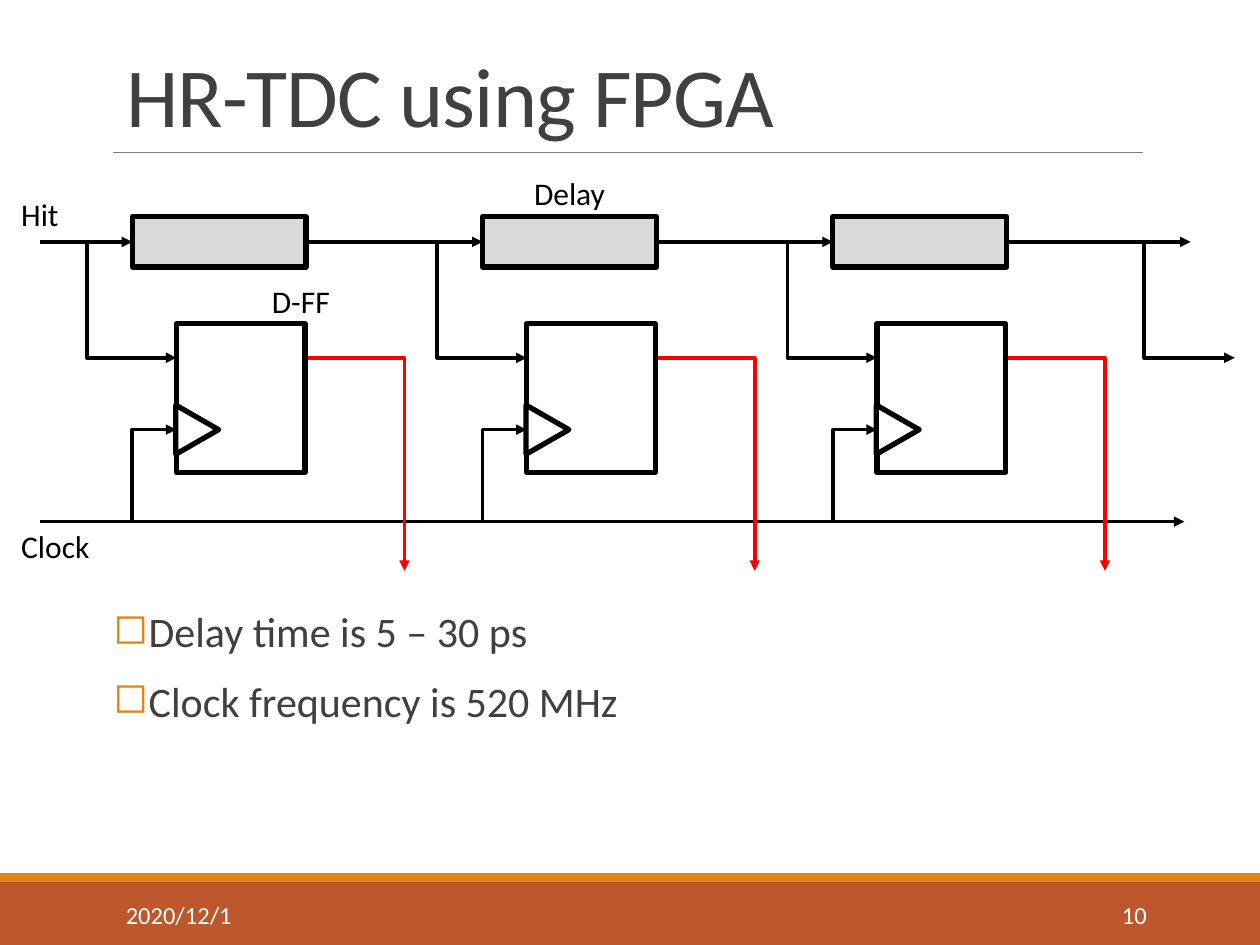
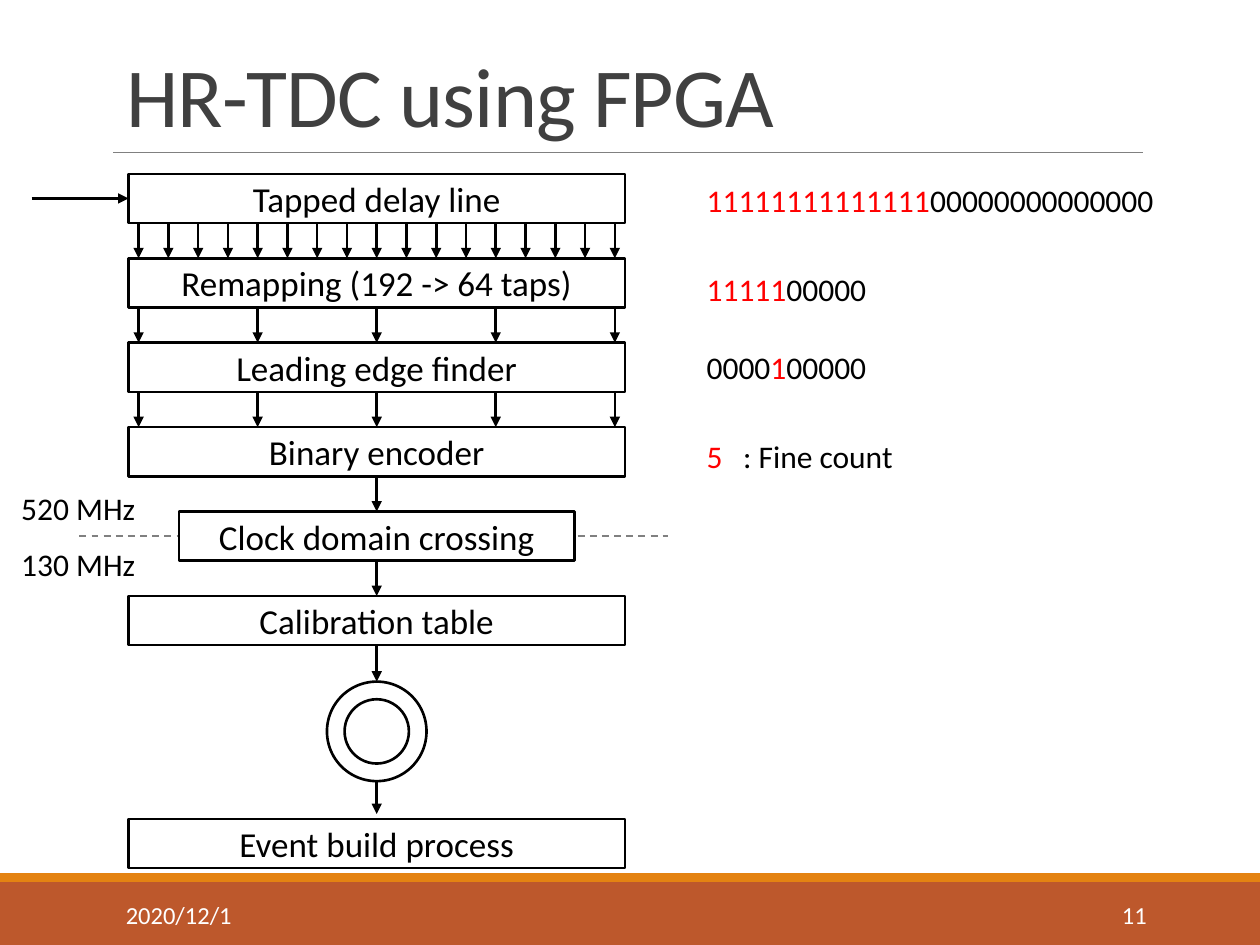
from dataclasses import dataclass
from typing import NamedTuple

from lxml import etree
from pptx import Presentation
from pptx import util as u
from pptx.dml.color import RGBColor
from pptx.enum import dml, shapes, text
from pptx.oxml import ns

IN = u.Inches
SHAPE = shapes.MSO_SHAPE
ALIGN = text.PP_ALIGN
ANCHOR = text.MSO_ANCHOR


@dataclass(frozen=True)
class Theme:
    font: str = "Calibri"
    ink: str = "000000"
    paper: str = "FFFFFF"
    body: str = "404040"
    rust: str = "BD582C"
    orange: str = "E48312"
    rule: str = "808080"
    delay: str = "D9D9D9"
    signal: str = "FF0000"
    title_size: int = 48
    body_size: int = 24
    stage_size: int = 20
    label_size: int = 18
    footer_size: int = 14


class Box(NamedTuple):
    left: float
    top: float
    width: float
    height: float


T = Theme()


# ---- Shared drawing helpers ----
def rgb(colour):
    return RGBColor.from_string(colour)


def write(frame, runs, *, size=T.label_size, colour=T.ink, align=ALIGN.LEFT,
          anchor=ANCHOR.TOP, wrap=True):
    """Fill the first paragraph; runs is a string or (string, colour) pairs."""
    frame.word_wrap = wrap
    frame.vertical_anchor = anchor
    paragraph = frame.paragraphs[0]
    paragraph.alignment = align
    for words, run_colour in [(runs, colour)] if isinstance(runs, str) else runs:
        run = paragraph.add_run()
        run.text = words
        run.font.name = T.font
        run.font.size = u.Pt(size)
        run.font.color.rgb = rgb(run_colour)
    return paragraph


def add_text(slide, box, runs, **style):
    frame = slide.shapes.add_textbox(*map(IN, box)).text_frame
    write(frame, runs, **style)
    return frame


def add_label(slide, left, top, width, runs):
    frame = add_text(slide, Box(left, top, width, 0.4), runs, wrap=False)
    frame.auto_size = text.MSO_AUTO_SIZE.SHAPE_TO_FIT_TEXT


def add_block(slide, kind, box, fill=T.paper, weight=None):
    block = slide.shapes.add_shape(kind, *map(IN, box))
    block.shadow.inherit = False
    block.fill.solid()
    block.fill.fore_color.rgb = rgb(fill)
    if weight:
        block.line.color.rgb = rgb(T.ink)
        block.line.width = u.Pt(weight)
    else:
        block.line.fill.background()
    return block


def add_wire(slide, start, end, *, colour=T.ink, weight=2.0, arrow="tailEnd",
             bent=False):
    """Straight wire, or one that runs across and then up or down."""
    kind = shapes.MSO_CONNECTOR.ELBOW if bent else shapes.MSO_CONNECTOR.STRAIGHT
    wire = slide.shapes.add_connector(kind, *map(IN, (*start, *end)))
    wire.line.color.rgb = rgb(colour)
    wire.line.width = u.Pt(weight)
    if bent:
        wire.element.spPr.find(ns.qn("a:prstGeom")).set("prst", "bentConnector2")
    if arrow:
        etree.SubElement(wire.get_or_add_ln(), ns.qn(f"a:{arrow}"), type="triangle")
    etree.SubElement(wire.element.spPr, ns.qn("a:effectLst"))
    return wire


# ---- Slide frame: bands, title, rule, footer ----
def add_frame(prs, title, date, number):
    slide = prs.slides.add_slide(prs.slide_layouts[5])
    add_block(slide, SHAPE.RECTANGLE, Box(0, 7, 10, 0.5), T.rust)
    add_block(slide, SHAPE.RECTANGLE, Box(0, 6.93, 10, 0.07), T.orange)
    add_wire(slide, (0.9, 1.21), (9.07, 1.21), colour=T.rule, weight=0.5, arrow=None)

    heading = slide.shapes.title
    heading.left, heading.top, heading.width, heading.height = map(
        IN, (0.9, 0.31, 8.25, 0.89))
    heading.text_frame.auto_size = text.MSO_AUTO_SIZE.NONE
    line = write(heading.text_frame, title, size=T.title_size, colour=T.body,
                 anchor=ANCHOR.BOTTOM)
    line.line_spacing = 0.85
    line.runs[0].font._element.set("spc", "-50")

    footer = dict(size=T.footer_size, colour=T.paper, anchor=ANCHOR.MIDDLE)
    add_text(slide, Box(0.9, 7.06, 2.03, 0.4), date, **footer)
    add_text(slide, Box(8.12, 7.06, 1.08, 0.4), number, align=ALIGN.RIGHT, **footer)
    return slide


# ---- Delay line circuit ----
def add_hit_tap(slide, tap_x, pin_x, hit_y):
    add_wire(slide, (pin_x, hit_y + 0.92), (tap_x, hit_y), arrow="headEnd", bent=True)


def add_flip_flop(slide, box, clock_y):
    """One D-FF with its output, hit tap and clock tap."""
    right, data_y, pin_y = box.left + box.width, box.top + 0.27, box.top + 0.84
    add_wire(slide, (right, data_y), (right + 0.79, data_y + 1.69),
             colour=T.signal, bent=True)
    add_block(slide, SHAPE.RECTANGLE, box, weight=3)
    clock_mark = add_block(slide, SHAPE.ISOSCELES_TRIANGLE,
                           Box(box.left - 0.03, box.top + 0.67, 0.39, 0.34), weight=3)
    clock_mark.rotation = 90
    add_hit_tap(slide, box.left - 0.71, box.left, data_y - 0.92)
    add_wire(slide, (box.left, pin_y), (box.left - 0.35, clock_y),
             arrow="headEnd", bent=True)


def add_circuit(slide, box, stages=3, pitch=2.78):
    start_x, hit_y = box.left + 0.25, box.top + 0.59
    clock_y = hit_y + 2.22
    add_wire(slide, (start_x, clock_y), (box.left + 9.33, clock_y))

    previous = None
    for stage in range(stages):
        cell_x = start_x + 0.73 + stage * pitch
        add_flip_flop(slide, Box(cell_x + 0.35, hit_y + 0.65, 1.02, 1.18), clock_y)
        cell = add_block(slide, SHAPE.RECTANGLE,
                         Box(cell_x, hit_y - 0.2, 1.38, 0.4), T.delay, weight=3)
        hit = add_wire(slide, (start_x, hit_y), (cell_x, hit_y))
        if previous:
            hit.begin_connect(previous, 3)
        hit.end_connect(cell, 1)
        previous = cell

    # The hit goes on to further stages
    onward = add_wire(slide, (box.left + 7.92, hit_y), (box.left + 9.38, hit_y))
    onward.begin_connect(previous, 3)
    add_hit_tap(slide, box.left + 9.01, box.left + 9.73, hit_y)

    for name, dx, dy, width in (("Delay", 4.07, 0, 0.77), ("D-FF", 1.99, 0.86, 0.67),
                                ("Clock", 0, 2.8, 0.75), ("Hit", 0, 0.17, 0.5)):
        add_label(slide, box.left + dx, box.top + dy, width, name)


# ---- Bulleted facts ----
def add_facts(slide, box, facts):
    frame = add_text(slide, box, facts[0], size=T.body_size, colour=T.body)
    frame.margin_left = frame.margin_right = 0
    for fact in facts[1:]:
        run = frame.add_paragraph().add_run()
        run.text = fact
        run.font.name = T.font
        run.font.size = u.Pt(T.body_size)
        run.font.color.rgb = rgb(T.body)
    for paragraph in frame.paragraphs:
        paragraph.line_spacing = 0.9
        paragraph.space_before, paragraph.space_after = u.Pt(12), u.Pt(2)
        props = paragraph._p.get_or_add_pPr()
        props.set("marL", str(IN(0.28)))
        props.set("indent", str(-IN(0.28)))
        bullet_colour = etree.SubElement(props, ns.qn("a:buClr"))
        etree.SubElement(bullet_colour, ns.qn("a:srgbClr"), val=T.orange)
        etree.SubElement(props, ns.qn("a:buChar"), char="◻")


# ---- Processing pipeline ----
def add_taps(slide, upper, lower, box, top, count):
    """Evenly spaced arrows between two stages; the middle one is joined."""
    inset, gap = 0.08, 0.28
    for i in range(count):
        share = i / (count - 1) if count > 1 else 0.5
        x = box.left + inset + share * (box.width - 2 * inset)
        tap = add_wire(slide, (x, top), (x, top + gap), weight=1.5)
        if share == 0.5:
            tap.begin_connect(upper, 2)
            tap.end_connect(lower, 0)


def add_pipeline(slide, box, pitch=0.67, height=0.39):
    middle = box.left + box.width / 2
    crossing_y = box.top + 4 * pitch + height / 2
    add_wire(slide, (0.63, crossing_y), (5.3, crossing_y), colour=T.rule, weight=1,
             arrow=None).line.dash_style = dml.MSO_LINE.DASH

    def add_stage(name, top, inset=0.0):
        stage = add_block(slide, SHAPE.RECTANGLE,
                          Box(box.left + inset, top, box.width - 2 * inset, height),
                          weight=1.5)
        write(stage.text_frame, name, size=T.stage_size, align=ALIGN.CENTER,
              anchor=ANCHOR.MIDDLE)
        return stage

    # Stages, each with the number of lines that lead into it
    previous = None
    for row, (name, lines, inset) in enumerate((
            ("Tapped delay line", 0, 0), ("Remapping (192 -> 64 taps)", 17, 0),
            ("Leading edge finder", 5, 0), ("Binary encoder", 5, 0),
            ("Clock domain crossing", 1, 0.4), ("Calibration table", 1, 0))):
        top = box.top + row * pitch
        stage = add_stage(name, top, inset)
        if previous:
            add_taps(slide, previous, stage, box, top - pitch + height, lines)
        else:
            hit_y = top + height / 2
            add_wire(slide, (box.left - 0.77, hit_y), (box.left, hit_y),
                     weight=1.5).end_connect(stage, 1)
        previous = stage

    # Ring buffer and event builder
    ring_top, ring_size = box.top + 4.03, 0.79
    ring = add_block(slide, SHAPE.DONUT,
                     Box(middle - ring_size / 2, ring_top, ring_size, ring_size),
                     weight=1.5)
    ring.adjustments[0] = 0.177
    into_ring = add_wire(slide, (middle, ring_top - 0.3), (middle, ring_top), weight=1.5)
    into_ring.begin_connect(previous, 2)
    into_ring.end_connect(ring, 0)
    ring_bottom = ring_top + ring_size
    add_wire(slide, (middle, ring_bottom), (middle, ring_bottom + 0.26), weight=1.5)
    add_stage("Event build process", box.top + box.height - height)

    # Clock domains on either side of the crossing
    add_label(slide, 0.07, crossing_y - 0.42, 1.12, "520 MHz")
    add_label(slide, 0.07, crossing_y + 0.02, 1.12, "130 MHz")


# ---- Bit patterns beside the stages ----
def add_bit_patterns(slide, box):
    on, off = T.signal, T.ink
    for dx, dy, width, runs in (
            (0, 0, 3.79, [("1" * 14, on), ("0" * 14, off)]),
            (0, 0.7, 1.48, [("11111", on), ("00000", off)]),
            (0, 1.32, 1.48, [("0000", off), ("1", on), ("00000", off)]),
            (0, 2.03, 0.32, [("5", on)]),
            (0.29, 2.03, 1.47, ": Fine count")):
        add_label(slide, box.left + dx, box.top + dy, width, runs)


def main():
    prs = Presentation()
    prs.slide_width, prs.slide_height = IN(10), IN(7.5)
    title, date = "HR-TDC using FPGA", "2020/12/1"

    circuit = add_frame(prs, title, date, "10")
    add_circuit(circuit, Box(0.07, 1.33, 9.73, 3.2))
    add_facts(circuit, Box(0.9, 4.8, 8.25, 1.75),
              ("Delay time is 5 – 30 ps", "Clock frequency is 520 MHz"))

    pipeline = add_frame(prs, title, date, "11")
    add_pipeline(pipeline, Box(1.02, 1.38, 3.94, 5.51))
    add_bit_patterns(pipeline, Box(5.51, 1.39, 3.79, 2.43))

    prs.save("out.pptx")


if __name__ == "__main__":
    main()
